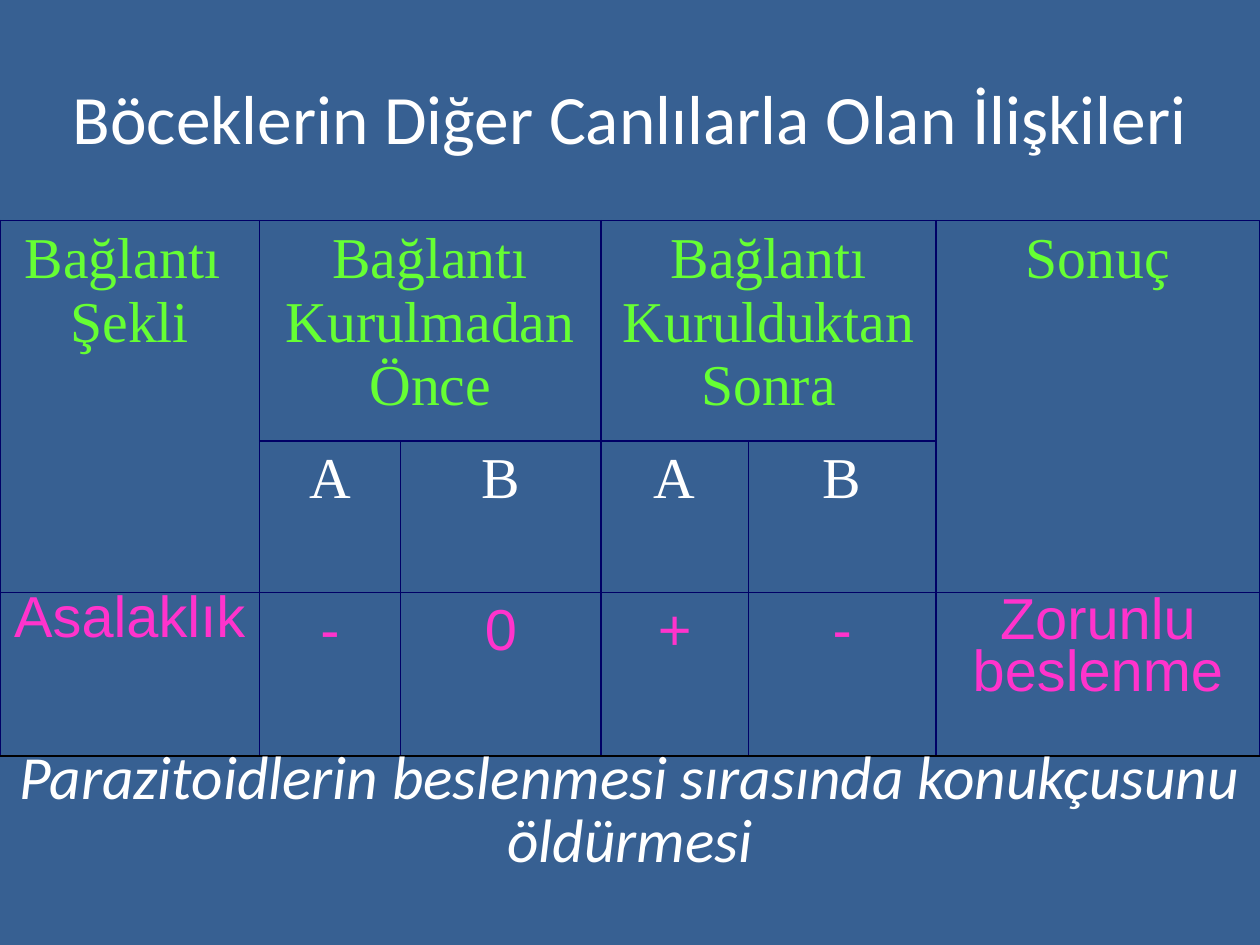
from dataclasses import dataclass

from lxml.etree import SubElement
from pptx import Presentation
from pptx.dml.color import RGBColor as Color
from pptx.enum.text import MSO_ANCHOR as Anchor, PP_ALIGN as Align
from pptx.oxml.ns import qn
from pptx.util import Inches, Pt


@dataclass(frozen=True)
class Theme:
    background: str = "376092"
    white: str = "FFFFFF"
    green: str = "66FF33"
    pink: str = "FF33CC"
    grid: str = "000066"
    base: str = "000000"
    sans: str = "Calibri"
    serif: str = "Times New Roman"
    plain: str = "Arial"
    title_size: float = 39.6
    table_size: float = 33
    note_size: float = 35


THEME = Theme()
TITLE = "Böceklerin Diğer Canlılarla Olan İlişkileri"
NOTE = "Parazitoidlerin beslenmesi sırasında konukçusunu öldürmesi"
ROWS = [
    [["Bağlantı ", "Şekli"], ["Bağlantı Kurulmadan Önce"], [], ["Bağlantı Kurulduktan Sonra"], [], ["Sonuç"]],
    [[], ["A"], ["B"], ["A"], ["B"], []],
    [["Asalaklık"], ["-"], ["0"], ["+"], ["-"], ["Zorunlu beslenme"]],
]
ROW_STYLES = [(THEME.serif, THEME.green), (THEME.serif, THEME.white), (THEME.plain, THEME.pink)]
MERGES = [((0, 0), (1, 0)), ((0, 1), (0, 2)), ((0, 3), (0, 4)), ((0, 5), (1, 5))]
RESULT_SPACING = {0: 0.75, 5: 0.8}
COLUMN_WIDTHS = [2.06, 1.12, 1.59, 1.17, 1.49, 2.57]
ROW_HEIGHTS = [1.74, 0.75, 1.3]
TABLE_TOP = 1.75


def write(frame, lines, font, size, color, italic=False, spacing=None, before=None):
    for index, line in enumerate(lines):
        paragraph = frame.add_paragraph() if index else frame.paragraphs[0]
        paragraph.alignment = Align.CENTER
        paragraph.line_spacing = spacing
        paragraph.space_before = before
        run = paragraph.add_run()
        run.text = line
        run.font.name = font
        run.font.size = Pt(size)
        run.font.italic = italic
        run.font.color.rgb = Color.from_string(color)


def add_text(slide, box, text, size, anchor, **style):
    frame = slide.shapes.add_textbox(*map(Inches, box)).text_frame
    frame.word_wrap = True
    frame.vertical_anchor = anchor
    write(frame, [text], THEME.sans, size, THEME.white, **style)


def set_borders(cell, bottom):
    properties = cell._tc.get_or_add_tcPr()
    colors = {"lnL": THEME.grid, "lnR": THEME.grid, "lnT": THEME.grid, "lnB": bottom}
    for side, color in colors.items():
        line = SubElement(properties, qn(f"a:{side}"), w=str(Pt(1)))
        fill = SubElement(line, qn("a:solidFill"))
        SubElement(fill, qn("a:srgbClr"), val=color)


def add_relation_table(slide):
    size = (len(ROWS), len(COLUMN_WIDTHS))
    box = (0, TABLE_TOP, sum(COLUMN_WIDTHS), sum(ROW_HEIGHTS))
    table = slide.shapes.add_table(*size, *map(Inches, box)).table
    table.first_row = table.horz_banding = False
    for column, width in zip(table.columns, COLUMN_WIDTHS):
        column.width = Inches(width)
    for row, height in zip(table.rows, ROW_HEIGHTS):
        row.height = Inches(height)
    for start, end in MERGES:
        table.cell(*start).merge(table.cell(*end))
    last = len(ROWS) - 1
    for row_index, (row, (font, color)) in enumerate(zip(ROWS, ROW_STYLES)):
        for column_index, lines in enumerate(row):
            cell = table.cell(row_index, column_index)
            set_borders(cell, THEME.base if row_index == last else THEME.grid)
            cell.fill.background()
            spacing = before = None
            if row_index == last:
                spacing = RESULT_SPACING.get(column_index)
                before = None if spacing else Pt(THEME.table_size * 0.2)
            write(cell.text_frame, lines, font, THEME.table_size, color, spacing=spacing, before=before)


def main():
    presentation = Presentation()
    presentation.slide_width, presentation.slide_height = Inches(10), Inches(7.5)
    slide = presentation.slides.add_slide(presentation.slide_layouts[6])
    slide.background.fill.solid()
    slide.background.fill.fore_color.rgb = Color.from_string(THEME.background)
    add_text(slide, (0, 0.3, 10, 1.25), TITLE, THEME.title_size, Anchor.MIDDLE)
    add_relation_table(slide)
    add_text(slide, (0, 5.9, 10, 1.09), NOTE, THEME.note_size, Anchor.TOP, italic=True, spacing=0.85)
    presentation.save("out.pptx")


if __name__ == "__main__":
    main()
